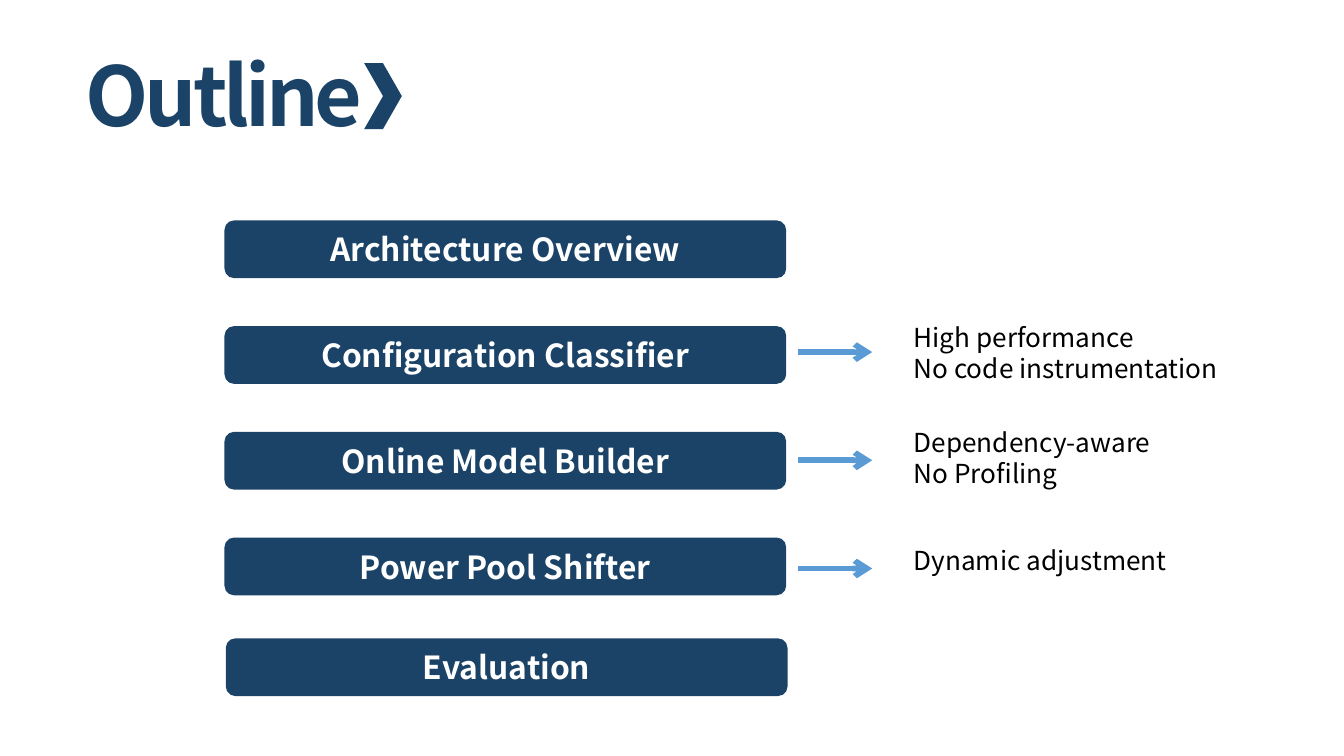
from lxml.etree import SubElement
from pptx import Presentation
from pptx.dml.color import RGBColor
from pptx.enum.shapes import MSO_CONNECTOR as Connector, MSO_SHAPE as Shape
from pptx.enum.text import MSO_ANCHOR as Anchor, MSO_AUTO_SIZE as AutoSize, PP_ALIGN as Align
from pptx.oxml.ns import qn
from pptx.util import Inches, Pt

FONT = "Noto Sans CJK SC"
NAVY, SKY, WHITE, BLACK = "1B4367", "5B9BD5", "FFFFFF", "000000"
SLIDE_WIDTH = 10
SLIDE_HEIGHT = SLIDE_WIDTH * 9 / 16
TOPIC_LEFT, TOPIC_TOP = 1.67, 1.64
TOPIC_PITCH = (4 - TOPIC_TOP) / 3
TOPIC_WIDTH, TOPIC_HEIGHT = 4.18, 0.43
ARROW_TOP = 2.62
ARROW_PITCH = (4.23 - ARROW_TOP) / 2
ARROW_START, ARROW_END = 5.94, 6.49
NOTE_LEFT = 6.7

TOPICS = ["Architecture Overview", "Configuration Classifier",
          "Online Model Builder", "Power Pool Shifter"]
NOTES = [
    (2.34, 2.57, 0.57, ["High performance", "No code instrumentation"]),
    (3.12, 2.02, 0.57, ["Dependency-aware", "No Profiling"]),
    (4, 2.14, 0.34, ["Dynamic adjustment"]),
]


def paint(color_format, color):
    color_format.rgb = RGBColor.from_string(color)


def write(frame, lines, size, color, bold=False, align=Align.LEFT, spacing=None):
    frame.auto_size = AutoSize.SHAPE_TO_FIT_TEXT
    for index, line in enumerate(lines):
        paragraph = frame.paragraphs[0] if index == 0 else frame.add_paragraph()
        paragraph.alignment = align
        run = paragraph.add_run()
        run.text = line
        run.font.size = Pt(size)
        run.font.bold = bold
        run.font.name = FONT
        paint(run.font.color, color)
        properties = run.font._element
        SubElement(properties, qn("a:ea")).set("typeface", FONT)
        if spacing is not None:
            properties.set("spc", str(round(spacing * 100)))


def add_block(slide, kind, left, top, width, height):
    block = slide.shapes.add_shape(
        kind, Inches(left), Inches(top), Inches(width), Inches(height))
    block.shadow.inherit = False
    block.fill.solid()
    paint(block.fill.fore_color, NAVY)
    block.line.fill.background()
    return block


def add_topic(slide, left, top, topic):
    block = add_block(slide, Shape.ROUNDED_RECTANGLE, left, top, TOPIC_WIDTH, TOPIC_HEIGHT)
    frame = block.text_frame
    frame.word_wrap = True
    frame.vertical_anchor = Anchor.MIDDLE
    write(frame, [topic], 17, WHITE, bold=True, align=Align.CENTER)


def add_text(slide, left, top, width, height, wrap, lines, *style, **options):
    box = slide.shapes.add_textbox(
        Inches(left), Inches(top), Inches(width), Inches(height))
    box.text_frame.word_wrap = wrap
    write(box.text_frame, lines, *style, **options)


def add_arrow(slide, level):
    arrow = slide.shapes.add_connector(
        Connector.STRAIGHT, Inches(ARROW_START), Inches(level),
        Inches(ARROW_END), Inches(level))
    arrow.line.width = Pt(3)
    paint(arrow.line.color, SKY)
    SubElement(arrow.line._get_or_add_ln(), qn("a:tailEnd")).set("type", "arrow")
    SubElement(arrow._element.spPr, qn("a:effectLst"))


def main():
    deck = Presentation()
    deck.slide_width, deck.slide_height = Inches(SLIDE_WIDTH), Inches(SLIDE_HEIGHT)
    slide = deck.slides.add_slide(deck.slide_layouts[6])

    add_text(slide, 0.54, 0.28, 2.35, 0.84, True, ["Outline"], 44, NAVY,
             bold=True, spacing=-2.2)
    add_block(slide, Shape.CHEVRON, 2.71, 0.47, 0.28, 0.49)

    for row, topic in enumerate(TOPICS):
        add_topic(slide, TOPIC_LEFT, TOPIC_TOP + row * TOPIC_PITCH, topic)
    add_topic(slide, 1.68, 4.75, "Evaluation")

    for row, (top, width, height, lines) in enumerate(NOTES):
        add_arrow(slide, ARROW_TOP + row * ARROW_PITCH)
        add_text(slide, NOTE_LEFT, top, width, height, False, lines, 14, BLACK)

    deck.save("out.pptx")


if __name__ == "__main__":
    main()
